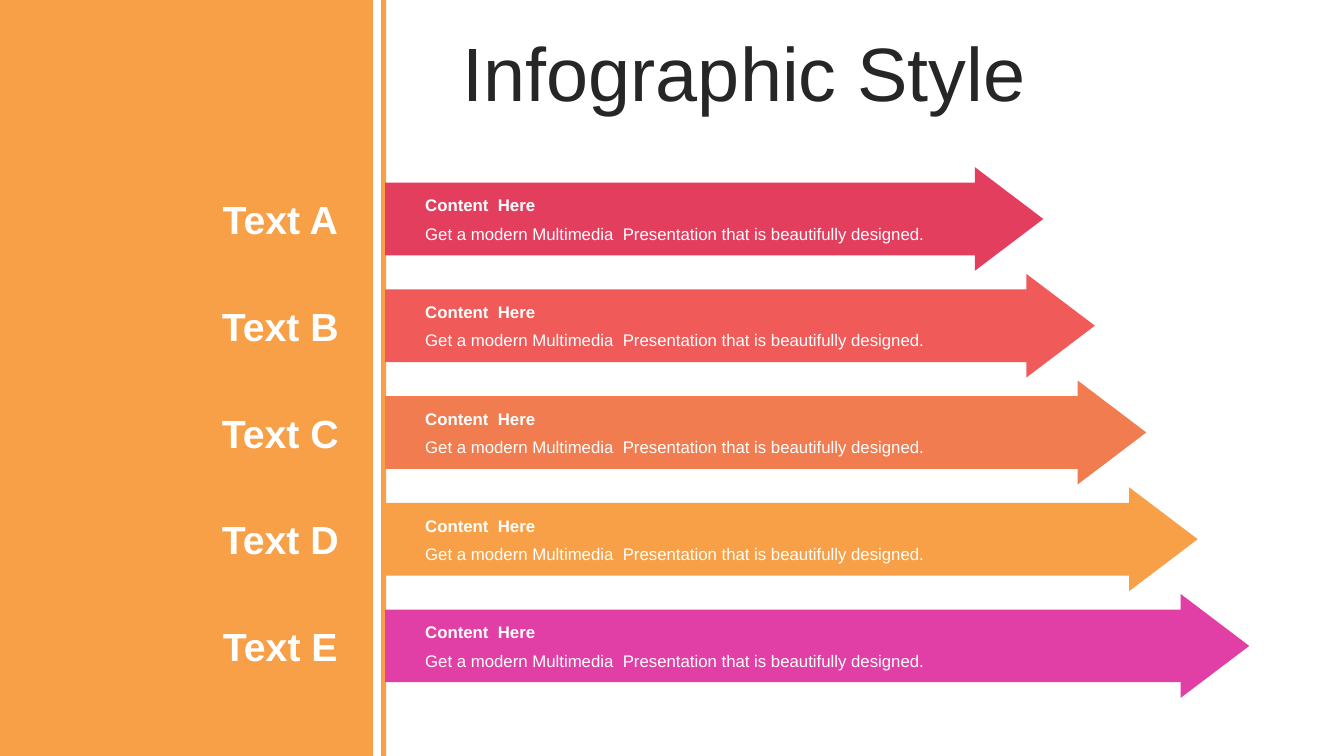
from pptx import Presentation
from pptx import util as u
from pptx.dml import color
from pptx.enum import shapes, text

WIDTH, HEIGHT = u.Inches(13.33), u.Inches(7.5)
COL, ROW = WIDTH / 100, HEIGHT / 100
HUES = {
    "ink": "262626",
    "white": "FFFFFF",
    "side": "F8A047",
    "Text A": "E43E5F",
    "Text B": "F05A59",
    "Text C": "F07C4F",
    "Text D": "F8A047",
    "Text E": "E23FA6",
}
TITLE = {"size": u.Pt(54), "name": "Arial", "bold": False}
LABEL = {"size": u.Pt(28), "name": "Arial", "bold": True}
HEAD = {"size": u.Pt(12), "name": "Arial", "bold": True}
LINE = {"size": u.Pt(12), "name": "Arial", "bold": False}
TOP, PITCH, TALL = 22.1, 14.12, 13.73
EDGE, REACH, STEP = 28.65, 48.98, 3.83


def grid(left, top, wide, tall):
    return [round(n) for n in (left * COL, top * ROW, wide * COL, tall * ROW)]


def paint(font, style, hue):
    for key, value in style.items():
        setattr(font, key, value)
    font.color.rgb = color.RGBColor.from_string(HUES[hue])


def block(slide, kind, area, hue):
    shape = slide.shapes.add_shape(kind, *grid(*area))
    shape.shadow.inherit = False
    shape.fill.solid()
    shape.fill.fore_color.rgb = color.RGBColor.from_string(HUES[hue])
    shape.line.fill.background()
    return shape


def arrow(slide, area, hue):
    shape = block(slide, shapes.MSO_SHAPE.RIGHT_ARROW, area, hue)
    shape.adjustments[0] = 0.7
    shape.adjustments[1] = 0.66


def note(host, area, words, style, align, anchor):
    frame = host.shapes.add_textbox(*grid(*area)).text_frame
    frame.word_wrap = True
    frame.auto_size = text.MSO_AUTO_SIZE.SHAPE_TO_FIT_TEXT
    frame.vertical_anchor = anchor
    para = frame.paragraphs[0]
    para.text = words
    para.alignment = align
    paint(para.font, style, "white")


def title(slide, words):
    shape = slide.shapes.title
    shape.left, shape.top, shape.width, shape.height = grid(33.68, 4.93, 63.9, 10.53)
    frame = shape.text_frame
    frame.text = words
    frame.auto_size = text.MSO_AUTO_SIZE.NONE
    frame.vertical_anchor = text.MSO_ANCHOR.MIDDLE
    para = frame.paragraphs[0]
    para.alignment = text.PP_ALIGN.LEFT
    para.line_spacing = 0.9
    paint(para.font, TITLE, "ink")


def band(slide, place, name):
    top = TOP + place * PITCH
    arrow(slide, (EDGE, top, REACH + place * STEP, TALL), name)
    note(slide, (15.45, top + 3.07, 10.8, 7.6), name, LABEL,
         text.PP_ALIGN.CENTER, text.MSO_ANCHOR.MIDDLE)
    group = slide.shapes.add_group_shape()
    lines = (
        (6.8, "Get a modern Multimedia  Presentation that is beautifully designed.", LINE),
        (3.07, "Content  Here", HEAD),
    )
    for drop, words, style in lines:
        note(group, (30.9, top + drop, 42.23, 4), words, style,
             text.PP_ALIGN.LEFT, text.MSO_ANCHOR.TOP)


def main():
    deck = Presentation()
    deck.slide_width, deck.slide_height = WIDTH, HEIGHT
    slide = deck.slides.add_slide(deck.slide_layouts.get_by_name("Title Only"))
    title(slide, "Infographic Style")
    for left, wide in ((0, 27.75), (28.35, 0.38)):
        block(slide, shapes.MSO_SHAPE.RECTANGLE, (left, 0, wide, 100), "side")
    for place, letter in enumerate("ABCDE"):
        band(slide, place, f"Text {letter}")
    deck.save("out.pptx")


if __name__ == "__main__":
    main()
